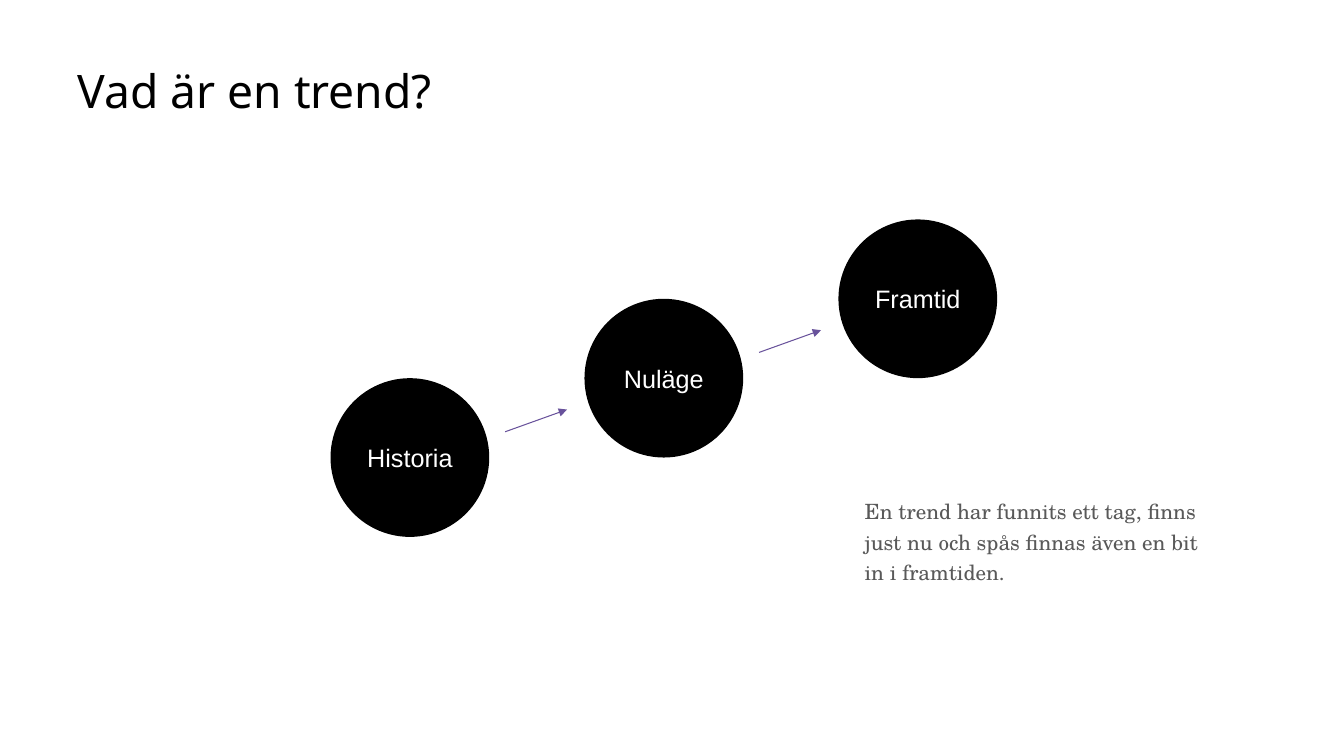
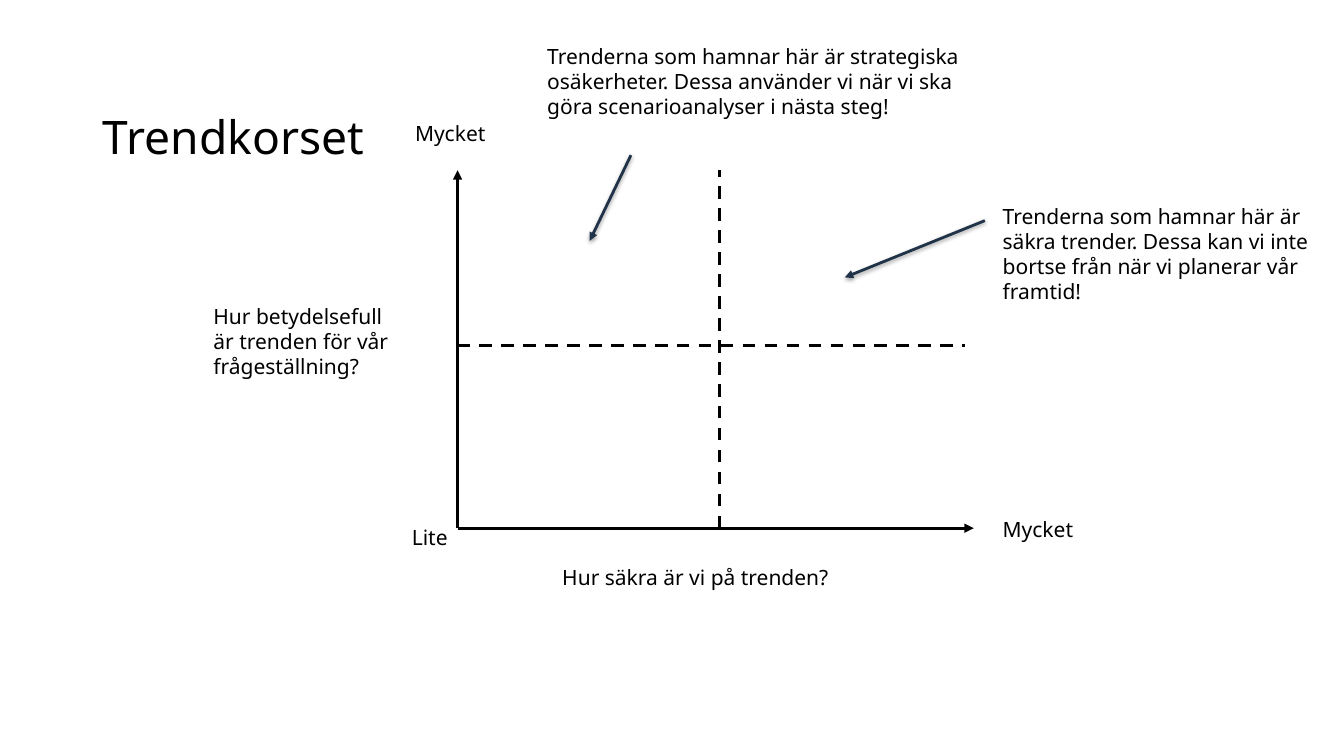
from dataclasses import dataclass
from typing import Any, Optional

from lxml.etree import SubElement
from pptx import Presentation
from pptx.dml.color import RGBColor
from pptx.enum.dml import MSO_LINE
from pptx.enum.shapes import MSO_CONNECTOR, MSO_SHAPE
from pptx.enum.text import MSO_ANCHOR, MSO_AUTO_SIZE, PP_ALIGN
from pptx.oxml.ns import qn
from pptx.util import Cm, Pt


@dataclass(frozen=True)
class Theme:
    black: RGBColor = RGBColor(0x00, 0x00, 0x00)
    white: RGBColor = RGBColor(0xFF, 0xFF, 0xFF)
    gray: RGBColor = RGBColor(0x59, 0x59, 0x59)
    purple: RGBColor = RGBColor(0x68, 0x52, 0x9B)
    navy: RGBColor = RGBColor(0x20, 0x33, 0x49)
    sans: str = "Noto Sans"
    serif: str = "TeX Gyre Schola"
    circle_font: str = "Arial"
    title_size: int = 33
    circle_size: int = 18
    body_size: int = 15


THEME = Theme()


@dataclass(frozen=True)
class TextStyle:
    font: str
    size: int
    color: RGBColor
    spacing: float = 1.0
    align: PP_ALIGN = PP_ALIGN.LEFT


TITLE = TextStyle(THEME.sans, THEME.title_size, THEME.black, 0.9)
BODY = TextStyle(THEME.sans, THEME.body_size, THEME.black)
QUOTE = TextStyle(THEME.serif, THEME.body_size, THEME.gray, 1.2)
CIRCLE = TextStyle(THEME.circle_font, THEME.circle_size, THEME.white, align=PP_ALIGN.CENTER)


@dataclass(frozen=True)
class LineStyle:
    color: RGBColor
    width: float
    arrow: bool = True
    dash: Optional[MSO_LINE] = None
    shadow: bool = False


STEP_ARROW = LineStyle(THEME.purple, 0.75)
AXIS = LineStyle(THEME.black, 2.25)
DIVIDER = LineStyle(THEME.black, 2.25, arrow=False, dash=MSO_LINE.DASH)
POINTER = LineStyle(THEME.navy, 2, shadow=True)


# Positions in the tuples below are in centimetres
@dataclass(frozen=True)
class Note:
    left: float
    top: float
    width: float
    height: float
    paragraphs: tuple[str, ...]
    style: TextStyle = BODY


@dataclass(frozen=True)
class Segment:
    start: tuple[float, float]
    end: tuple[float, float]
    style: LineStyle


def set_all(target: Any, values: dict[str, Any]) -> None:
    for name, value in values.items():
        setattr(target, name, value)


def write_text(frame: Any, paragraphs: tuple[str, ...], style: TextStyle,
               frame_format: dict[str, Any]) -> None:
    set_all(frame, {"word_wrap": True, **frame_format})
    for index, text in enumerate(paragraphs):
        para = frame.paragraphs[0] if index == 0 else frame.add_paragraph()
        set_all(para, {"alignment": style.align, "line_spacing": style.spacing})
        span = para.add_run()
        span.text = text
        set_all(span.font, {"name": style.font, "size": Pt(style.size)})
        span.font.color.rgb = style.color


def add_titled_page(deck: Any, title: str, left: float, top: float,
                    width: float, height: float) -> Any:
    page = deck.slides.add_slide(deck.slide_layouts[5])
    box = page.shapes.title
    set_all(box, {"left": Cm(left), "top": Cm(top), "width": Cm(width), "height": Cm(height)})
    write_text(box.text_frame, (title,), TITLE,
               {"vertical_anchor": MSO_ANCHOR.MIDDLE, "auto_size": MSO_AUTO_SIZE.NONE})
    return page


def add_note(page: Any, note: Note) -> None:
    box = page.shapes.add_textbox(Cm(note.left), Cm(note.top), Cm(note.width), Cm(note.height))
    write_text(box.text_frame, note.paragraphs, note.style,
               {"auto_size": MSO_AUTO_SIZE.SHAPE_TO_FIT_TEXT})


def add_circle(page: Any, left: float, top: float, diameter: float, label: str) -> None:
    circle = page.shapes.add_shape(MSO_SHAPE.OVAL, Cm(left), Cm(top), Cm(diameter), Cm(diameter))
    circle.shadow.inherit = False
    circle.fill.solid()
    circle.fill.fore_color.rgb = THEME.black
    circle.line.fill.background()
    write_text(circle.text_frame, (label,), CIRCLE, {"vertical_anchor": MSO_ANCHOR.MIDDLE})


def add_segment(page: Any, segment: Segment) -> None:
    style = segment.style
    points = [Cm(value) for value in (*segment.start, *segment.end)]
    connector = page.shapes.add_connector(MSO_CONNECTOR.STRAIGHT, *points)
    set_all(connector.line, {"width": Pt(style.width), "dash_style": style.dash})
    connector.line.color.rgb = style.color
    properties = connector.element.spPr
    if style.arrow:
        SubElement(properties.find(qn("a:ln")), qn("a:tailEnd"), type="triangle")
    effects = SubElement(properties, qn("a:effectLst"))
    if style.shadow:
        shadow = SubElement(effects, qn("a:outerShdw"), blurRad="40000", dist="20000",
                            dir="5400000", rotWithShape="0")
        color = SubElement(shadow, qn("a:srgbClr"), val=str(THEME.black))
        SubElement(color, qn("a:alpha"), val="38000")


def build_trend_page(deck: Any) -> None:
    page = add_titled_page(deck, "Vad är en trend?", 1.7, 0.76, 30.48, 3.18)

    # Rising row of circles with an arrow after each but the last
    step_x, step_y = 6.4, -2
    labels = ("Historia", "Nuläge", "Framtid")
    for index, label in enumerate(labels):
        shift_x, shift_y = index * step_x, index * step_y
        add_circle(page, 8.33 + shift_x, 9.53 + shift_y, 4, label)
        if index < len(labels) - 1:
            start = (12.73 + shift_x, 10.88 + shift_y)
            add_segment(page, Segment(start, (start[0] + 1.56, start[1] - 0.56), STEP_ARROW))

    add_note(page, Note(21.54, 12.32, 8.97, 2.57, (
        "En trend har funnits ett tag, finns just nu och spås finnas även en bit in i framtiden.",
    ), QUOTE))


def build_cross_page(deck: Any) -> None:
    page = add_titled_page(deck, "Trendkorset", 2.34, 2.13, 29.21, 2.79)

    # Axes, dividers and pointers
    left, bottom, top = 11.53, 13.31, 4.29
    middle_x, middle_y = 18.14, 8.71
    for segment in (
        Segment((left, bottom), (left, top), AXIS),
        Segment((left, bottom), (24.54, bottom), AXIS),
        Segment((left, middle_y), (24.33, middle_y), DIVIDER),
        Segment((middle_x, bottom), (middle_x, top), DIVIDER),
        Segment((15.9, 3.91), (14.86, 6.07), POINTER),
        Segment((24.82, 5.56), (21.29, 6.99), POINTER),
    ):
        add_segment(page, segment)

    # Axis labels and explanations
    for note in (
        Note(10.21, 2.9, 2.41, 0.89, ("Mycket",)),
        Note(10.13, 13.1, 1.6, 0.89, ("Lite",)),
        Note(25.02, 12.9, 2.41, 0.89, ("Mycket",)),
        Note(13.92, 14.1, 7.57, 0.89, ("Hur säkra är vi på trenden?",)),
        Note(5.13, 7.52, 5.59, 2.18,
             ("Hur betydelsefull", "är trenden för vår frågeställning?")),
        Note(13.54, 0.97, 11.28, 2.18, (
            "Trenderna som hamnar här är strategiska osäkerheter. "
            "Dessa använder vi när vi ska göra scenarioanalyser i nästa steg!",)),
        Note(25.02, 5, 8.36, 2.82, (
            "Trenderna som hamnar här är säkra trender. "
            "Dessa kan vi inte bortse från när vi planerar vår framtid!",)),
    ):
        add_note(page, note)


def main() -> None:
    deck = Presentation()
    set_all(deck, {"slide_width": Cm(33.87), "slide_height": Cm(19.05)})
    build_trend_page(deck)
    build_cross_page(deck)
    deck.save("out.pptx")


if __name__ == "__main__":
    main()
